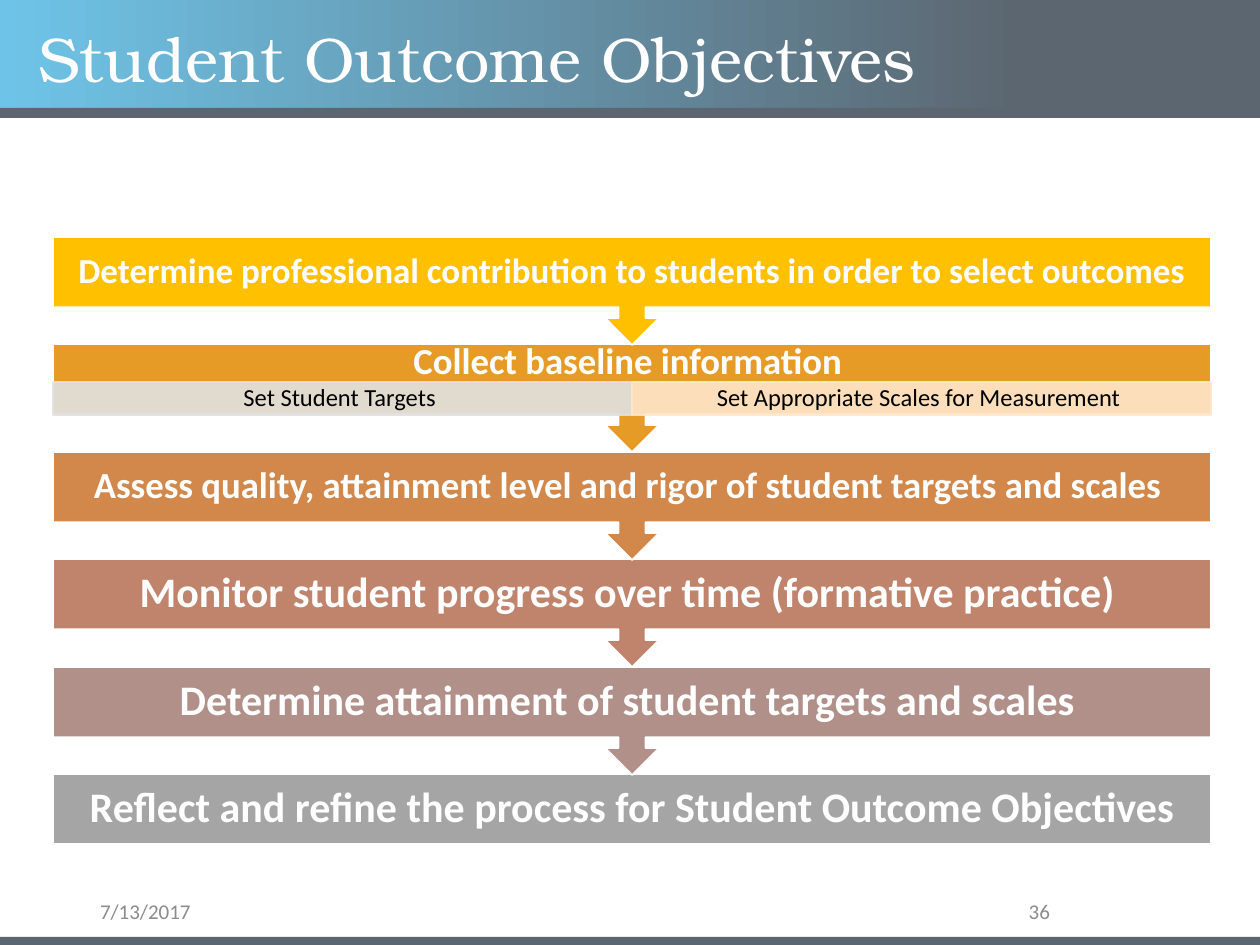
"""Build the Student Outcome Objectives process slide."""
from dataclasses import dataclass

from lxml import etree
from pptx import Presentation
from pptx.dml.color import RGBColor
from pptx.enum.shapes import MSO_SHAPE
from pptx.enum.text import MSO_ANCHOR, MSO_AUTO_SIZE, PP_ALIGN
from pptx.oxml.ns import qn
from pptx.util import Pt

RECTANGLE = MSO_SHAPE.RECTANGLE
CALLOUT = MSO_SHAPE.UP_ARROW_CALLOUT
MIDDLE = MSO_ANCHOR.MIDDLE
NO_AUTOFIT = MSO_AUTO_SIZE.NONE
LEFT, CENTER, RIGHT = PP_ALIGN.LEFT, PP_ALIGN.CENTER, PP_ALIGN.RIGHT
PX = 914400 // 126


@dataclass(frozen=True)
class Theme:
    sky: str = "6EC4E8"
    slate: str = "5C6670"
    white: str = "FFFFFF"
    black: str = "000000"
    footer: str = "8C8C8C"
    steps: tuple = ("FFC000", "E79B27", "D2884B", "C0846C", "B1908A", "A5A5A5")
    targets: str = "E1E1E1"
    scales: str = "FFE7CB"
    body_font: str = "Calibri"
    title_font: str = "TeX Gyre Bonum"
    title_size: int = 36
    large: int = 24
    medium: int = 21
    small: int = 20
    detail: int = 14
    footer_size: int = 12


THEME = Theme()


def write(frame, text, size, color, font=THEME.body_font, bold=False,
          align=CENTER, spacing=0.9, inset_x=13, inset_y=6):
    frame.word_wrap = True
    frame.auto_size = NO_AUTOFIT
    frame.vertical_anchor = MIDDLE
    frame.margin_left = frame.margin_right = inset_x * PX
    frame.margin_top = frame.margin_bottom = inset_y * PX
    paragraph = frame.paragraphs[0]
    paragraph.alignment = align
    paragraph.line_spacing = spacing
    run = paragraph.add_run()
    run.text = text
    run.font.name = font
    run.font.size = Pt(size)
    run.font.bold = bold
    run.font.color.rgb = RGBColor.from_string(color)


def add_block(kind, left, top, width, height, color, outline=None, opacity=100):
    block = slide.shapes.add_shape(kind, left * PX, top * PX, width * PX, height * PX)
    block.shadow.inherit = False
    block.fill.solid()
    block.fill.fore_color.rgb = RGBColor.from_string(color)
    if outline:
        block.line.width = Pt(1)
        block.line.color.rgb = RGBColor.from_string(outline)
    else:
        block.line.fill.background()
    if opacity < 100:
        for tint in block._element.spPr.iter(qn("a:srgbClr")):
            etree.SubElement(tint, qn("a:alpha"), val=str(opacity * 1000))
    return block


presentation = Presentation()
presentation.slide_width = 1260 * PX
presentation.slide_height = 945 * PX
slide = presentation.slides.add_slide(presentation.slide_layouts[5])

header = add_block(RECTANGLE, 0, 0, 1260, 110, THEME.sky)
header.fill.gradient()
header.fill.gradient_angle = 0
for stop, position, color in zip(header.fill.gradient_stops, (0, 0.81), (THEME.sky, THEME.slate)):
    stop.position = position
    stop.color.rgb = RGBColor.from_string(color)
for band_top in (108, 937):
    add_block(RECTANGLE, 0, band_top, 1260, 10, THEME.slate)

title = slide.shapes.title
title.left, title.top, title.width, title.height = 26 * PX, 26 * PX, 1086 * PX, 72 * PX
write(title.text_frame, "Student Outcome Objectives", THEME.title_size, THEME.white,
      font=THEME.title_font, align=LEFT)
slide.shapes._spTree.append(title._element)

for text, left, width, align in (("7/13/2017", 87, 284, LEFT), ("36", 890, 173, RIGHT)):
    footer = slide.shapes.add_textbox(left * PX, 897 * PX, width * PX, 29 * PX)
    write(footer.text_frame, text, THEME.footer_size, THEME.footer, align=align, spacing=1.0)

STEPS = (
    ("Determine professional contribution to students in order to select outcomes", THEME.small, 20),
    ("Collect baseline information ", THEME.medium, 20),
    ("Assess quality, attainment level and rigor of student targets and scales ", THEME.medium, 20),
    ("Monitor student progress over time (formative practice) ", THEME.large, 24),
    ("Determine attainment of student targets and scales ", THEME.large, 24),
    ("Reflect and refine the process for Student Outcome Objectives", THEME.large, 24),
)
DETAILS = (
    ("Set Student Targets ", THEME.targets),
    ("Set Appropriate Scales for Measurement ", THEME.scales),
)
STEP_LEFT, STEP_WIDTH, STEP_HEIGHT, CALLOUT_HEIGHT = 53, 1158, 70, 108
DETAIL_STEP, DETAIL_OFFSET, DETAIL_HEIGHT = 1, 38, 33
DETAIL_WIDTH = STEP_WIDTH // len(DETAILS)

for index, (text, size, inset) in reversed(list(enumerate(STEPS))):
    top = round(237 + 107.4 * index)
    is_last = index == len(STEPS) - 1
    step = add_block(RECTANGLE if is_last else CALLOUT, STEP_LEFT, top, STEP_WIDTH,
                     STEP_HEIGHT if is_last else CALLOUT_HEIGHT,
                     THEME.steps[index], THEME.white)
    label = step
    if not is_last:
        step.rotation = 180
        label_height = DETAIL_OFFSET if index == DETAIL_STEP else STEP_HEIGHT
        label = slide.shapes.add_textbox(STEP_LEFT * PX, top * PX, STEP_WIDTH * PX, label_height * PX)
    write(label.text_frame, text, size, THEME.white, bold=True, inset_x=inset, inset_y=0)
    if index == DETAIL_STEP:
        for column, (detail, color) in enumerate(DETAILS):
            cell = add_block(RECTANGLE, STEP_LEFT + column * DETAIL_WIDTH, top + DETAIL_OFFSET,
                             DETAIL_WIDTH, DETAIL_HEIGHT, color, color, opacity=90)
            write(cell.text_frame, detail, THEME.detail, THEME.black, inset_x=14, inset_y=2)

presentation.save("out.pptx")
